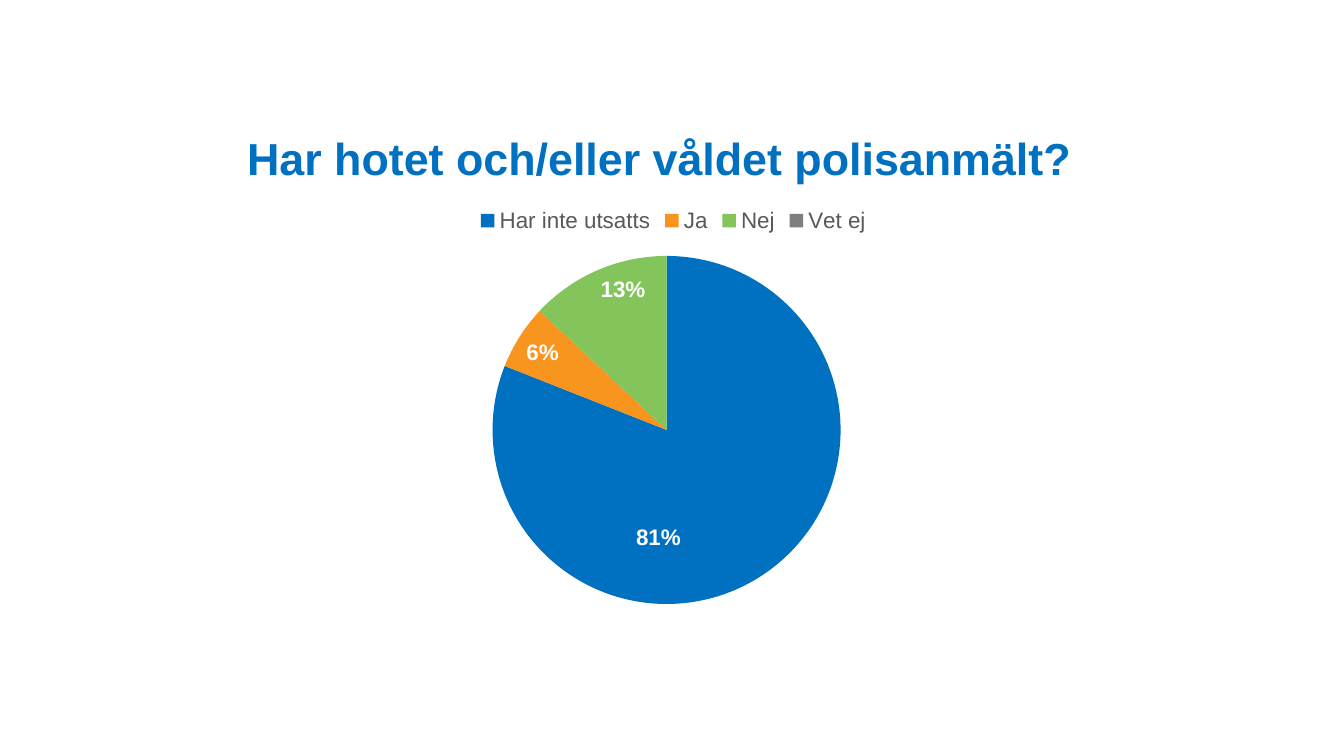
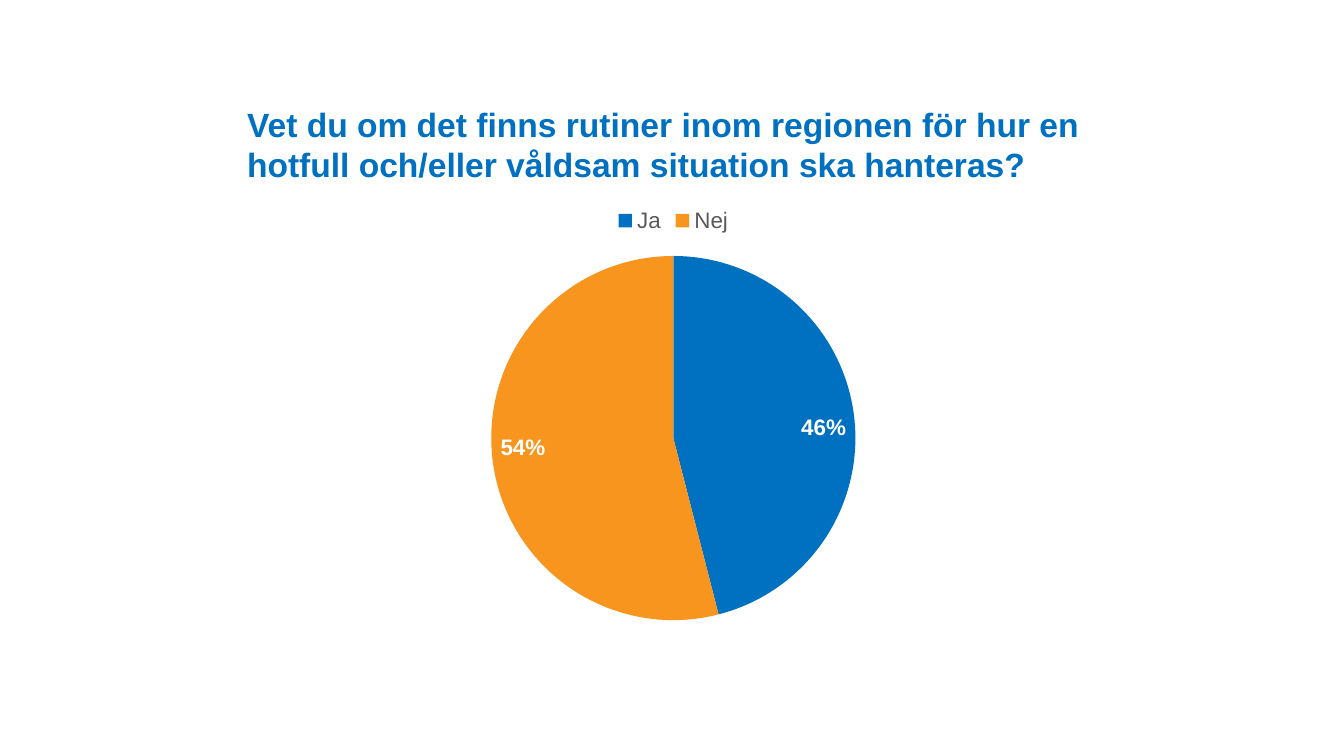
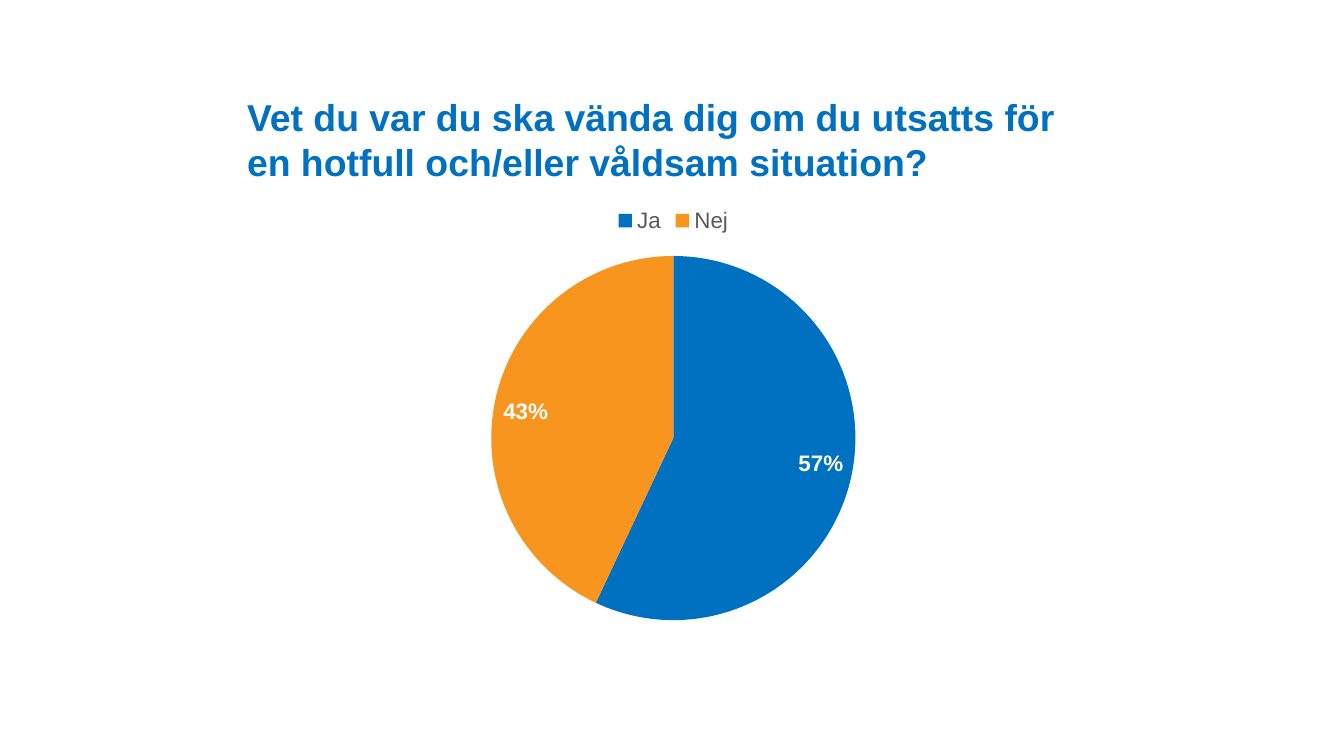
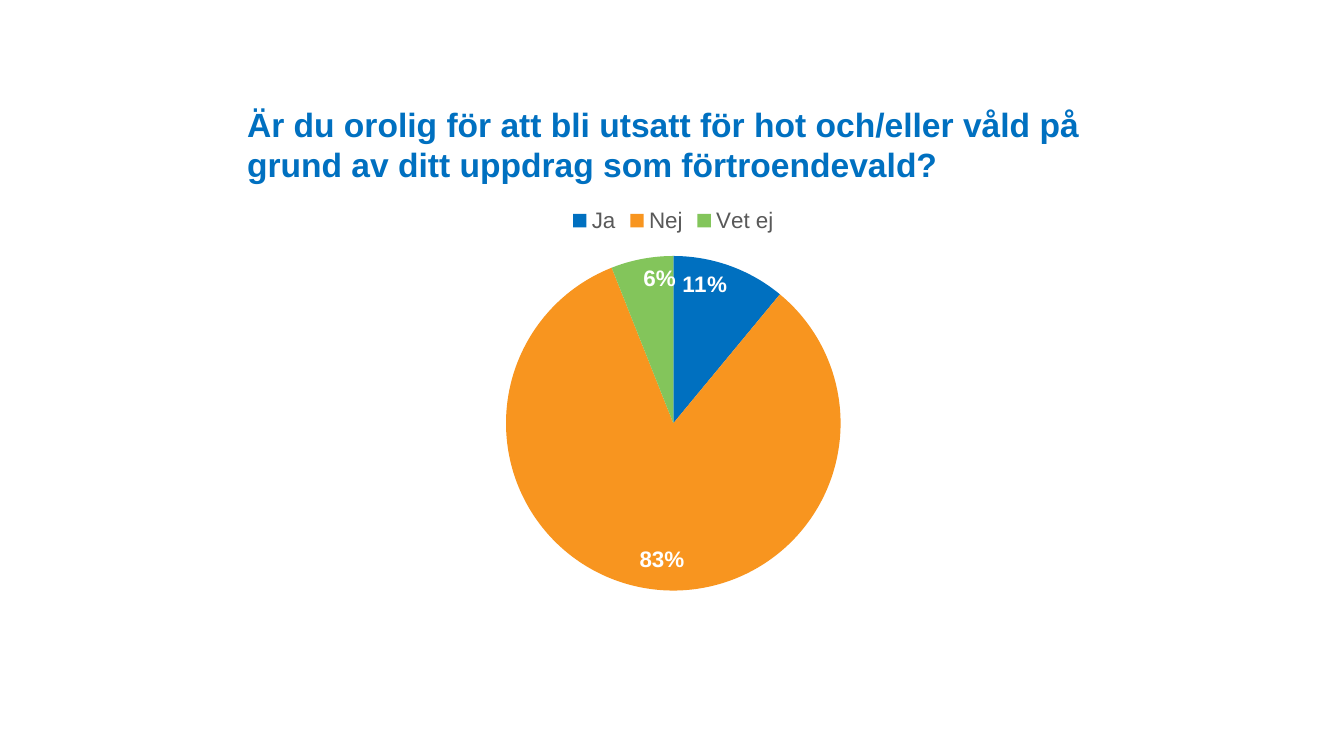
import copy

import pptx
import pptx.chart.data
import pptx.dml.color
import pptx.enum.chart
import pptx.enum.text
import pptx.oxml
import pptx.oxml.ns
import pptx.util

RGB = pptx.dml.color.RGBColor
BLUE = RGB(0x00, 0x70, 0xC0)
ORANGE = RGB(0xF8, 0x95, 0x1F)
GREEN = RGB(0x83, 0xC5, 0x5B)
GRAY = RGB(0x7F, 0x7F, 0x7F)
SLATE = RGB(0x59, 0x59, 0x59)
BLACK = RGB(0x00, 0x00, 0x00)
WHITE = RGB(0xFF, 0xFF, 0xFF)
SLICES = [BLUE, ORANGE, GREEN, GRAY]

# Lengths in px, 200 px to the inch
SCALE = 4572
WIDE, HIGH = 2000, 1125
TITLE = (348, 102, 1308, 182)
CHART = (348, 288, 1308, 664)

# Title, its size, answers, pie (left, top, size), moved labels
PAGES = [
    ("Har hotet och/eller våldet polisanmält?", 24,
     {"Har inte utsatts": 81, "Ja": 6, "Nej": 13, "Vet ej": 0},
     (733, 381, 518), {0: (-0.09, -0.04)}),
    ("Vet du om det finns rutiner inom regionen för hur en hotfull "
     "och/eller våldsam situation ska hanteras?", 18,
     {"Ja": 46, "Nej": 54}, (731, 381, 542), {}),
    ("Vet du var du ska vända dig om du utsatts för en hotfull "
     "och/eller våldsam situation?", 20,
     {"Ja": 57, "Nej": 43}, (731, 381, 542), {}),
    ("Är du orolig för att bli utsatt för hot och/eller våld på grund "
     "av ditt uppdrag som förtroendevald?", 18,
     {"Ja": 11, "Nej": 83, "Vet ej": 6},
     (753, 381, 498), {1: (-0.01, -0.02)}),
]


def px(*vals):
    return [pptx.util.Emu(val * SCALE) for val in vals]


def node(tag, body=""):
    """Make a chart XML element."""
    space = pptx.oxml.ns.nsdecls("c")
    return pptx.oxml.parse_xml(f"<c:{tag} {space}>{body}</c:{tag}>")


def layout(**vals):
    """Make a manual layout from its settings in order."""
    body = "".join(f'<c:{key} val="{val}"/>' for key, val in vals.items())
    return node("layout", f"<c:manualLayout>{body}</c:manualLayout>")


class Deck:
    def __init__(self, face="Arial"):
        self.face = face
        self.show = pptx.Presentation()
        self.show.slide_width, self.show.slide_height = px(WIDE, HIGH)
        self.slide = None

    def page(self):
        self.slide = self.show.slides.add_slide(self.show.slide_layouts[6])

    def style(self, font, size, color, bold=False):
        font.name = self.face
        font.size = pptx.util.Pt(size)
        font.color.rgb = color
        font.bold = bold

    def title(self, text, size):
        frame = self.slide.shapes.add_textbox(*px(*TITLE)).text_frame
        frame.word_wrap = True
        frame.vertical_anchor = pptx.enum.text.MSO_ANCHOR.BOTTOM
        run = frame.paragraphs[0].add_run()
        run.text = text
        self.style(run.font, size, BLUE, True)

    def pie(self, votes, disc, moves):
        data = pptx.chart.data.CategoryChartData()
        data.categories = list(votes)
        data.add_series("Series 1", list(votes.values()))
        chart = self.slide.shapes.add_chart(
            pptx.enum.chart.XL_CHART_TYPE.PIE, *px(*CHART), data).chart
        chart.has_title = False
        self.style(chart.font, 10, BLACK)

        # Legend
        chart.has_legend = True
        chart.legend.position = pptx.enum.chart.XL_LEGEND_POSITION.TOP
        chart.legend.include_in_layout = False
        self.style(chart.legend.font, 12, SLATE)

        # Slices
        plot = chart.plots[0]
        plot.vary_by_categories = True
        series = plot.series[0]
        for spot, color in zip(range(len(votes)), SLICES):
            form = series.points[spot].format
            form.fill.solid()
            form.fill.fore_color.rgb = color
            form.line.fill.background()
        self.labels(series, votes, moves)
        self.place(chart, disc)

    def labels(self, series, votes, moves):
        marks = series.data_labels
        marks.show_value = False
        marks.show_percentage = True
        marks.number_format = "0%"
        marks.number_format_is_linked = False
        marks.position = pptx.enum.chart.XL_LABEL_POSITION.INSIDE_END
        self.style(marks.font, 12, WHITE, True)

        # Moved labels keep the shared style; empty slices get none
        group = series._element.find(pptx.oxml.ns.qn("c:dLbls"))
        parts = [part for part in group
                 if not part.tag.endswith("showLeaderLines")]
        extra = []
        for spot, vote in enumerate(votes.values()):
            label = node("dLbl", f'<c:idx val="{spot}"/>')
            if vote == 0:
                label.append(pptx.oxml.parse_xml(
                    f'<c:delete {pptx.oxml.ns.nsdecls("c")} val="1"/>'))
            elif spot in moves:
                left, top = moves[spot]
                label.append(layout(x=left, y=top))
                label.extend(copy.deepcopy(parts))
            else:
                continue
            extra.append(label)
        group[0:0] = extra

    def place(self, chart, disc):
        """Fix the pie's place inside the chart."""
        left, top, size = disc
        area = chart._chartSpace.chart.plotArea
        for old in area.findall(pptx.oxml.ns.qn("c:layout")):
            area.remove(old)
        area.insert(0, layout(
            layoutTarget="inner", xMode="edge", yMode="edge",
            x=round((left - CHART[0]) / CHART[2], 4),
            y=round((top - CHART[1]) / CHART[3], 4),
            w=round(size / CHART[2], 4),
            h=round(size / CHART[3], 4)))


def main():
    deck = Deck()
    for text, size, votes, disc, moves in PAGES:
        deck.page()
        deck.title(text, size)
        deck.pie(votes, disc, moves)
    deck.show.save("out.pptx")


if __name__ == "__main__":
    main()
